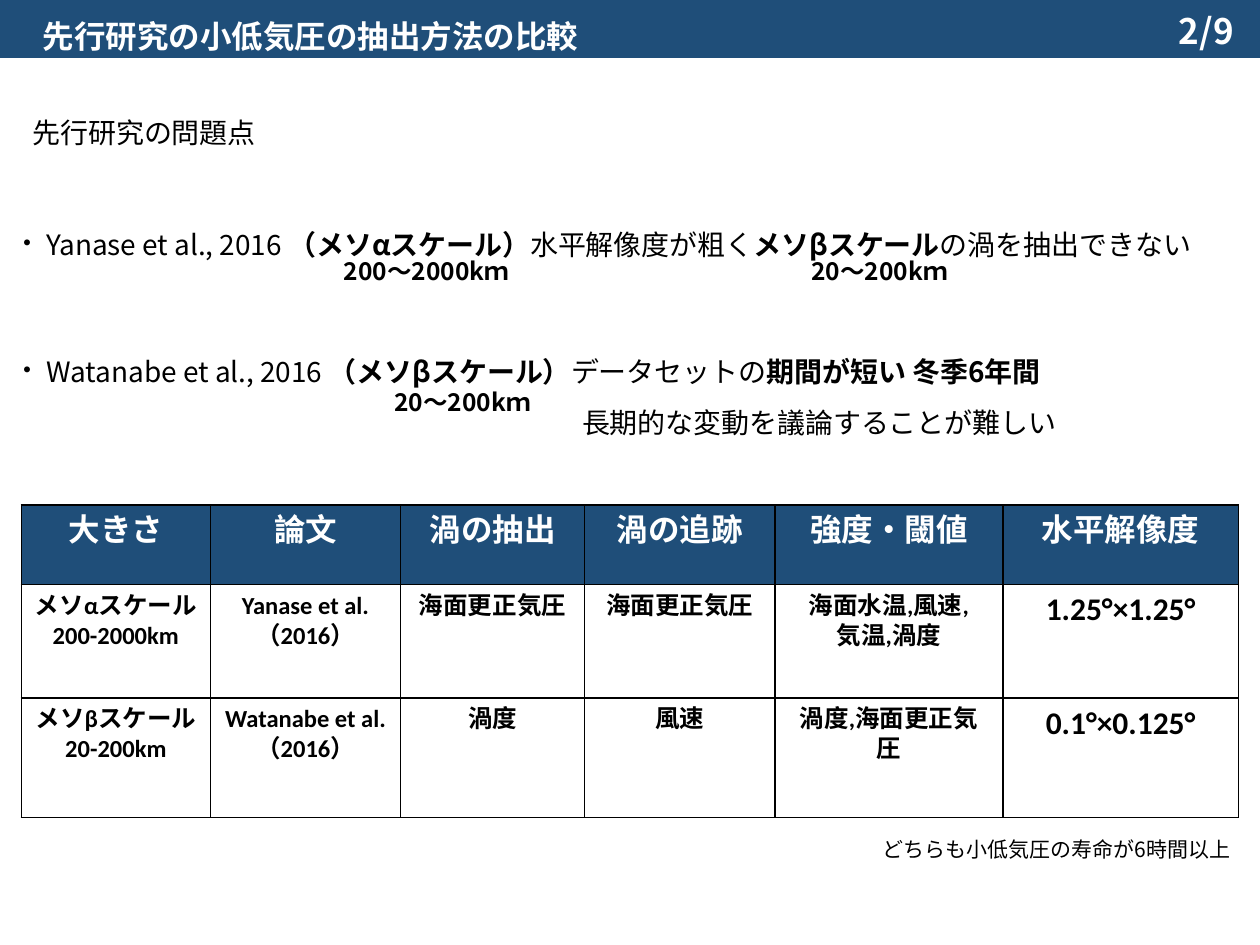
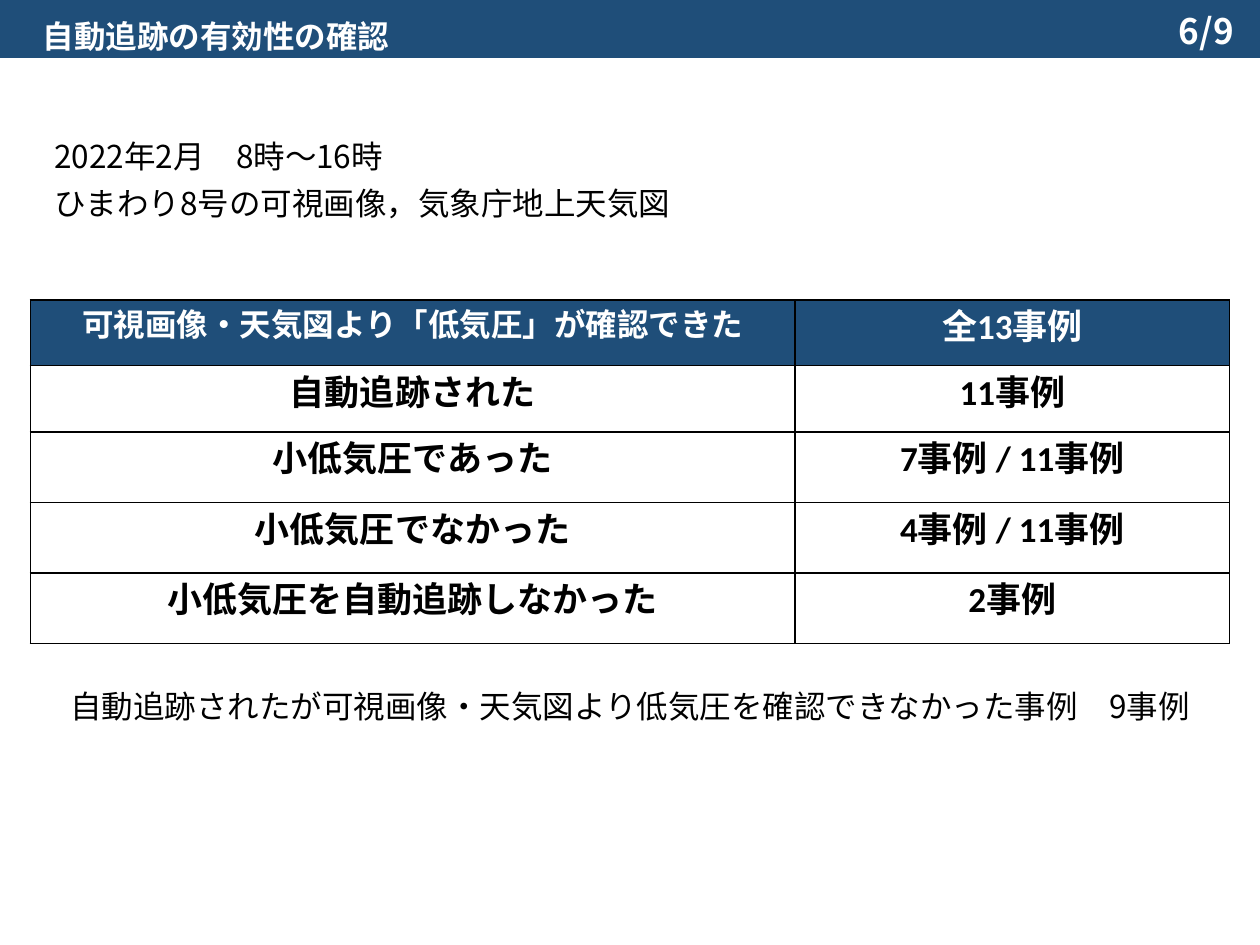
from dataclasses import dataclass

from lxml import etree
from pptx import Presentation, util as u
from pptx.dml.color import RGBColor
from pptx.enum import shapes, text
from pptx.oxml import ns


@dataclass(frozen=True)
class Theme:
    navy: str = "1F4E79"
    white: str = "FFFFFF"
    black: str = "000000"
    font: str = "Noto Sans CJK JP"
    table_font: str = "Calibri"
    note: int = 12
    label: int = 14
    text: int = 16
    title: int = 18
    large: int = 20


@dataclass(frozen=True)
class Box:
    left: float
    top: float
    width: float
    height: float

    def inches(self):
        return [u.Inches(n) for n in (self.left, self.top, self.width, self.height)]

    def inner(self, left, top, width, height):
        return Box(self.left + left, self.top + top, width, height)


THEME = Theme()
PAGE = Box(0, 0, 10, 7.5)
TOP, MIDDLE = text.MSO_ANCHOR.TOP, text.MSO_ANCHOR.MIDDLE
LEFT, CENTER, RIGHT = text.PP_ALIGN.LEFT, text.PP_ALIGN.CENTER, text.PP_ALIGN.RIGHT


def style_run(run, size, color, bold, font=THEME.font):
    run.font.size = u.Pt(size)
    run.font.bold = bold
    run.font.name = font
    run.font.color.rgb = RGBColor.from_string(color)
    east_asian = etree.SubElement(run.font._element, ns.qn("a:ea"))
    east_asian.set("typeface", font)


def write_paragraph(paragraph, parts, size, color=THEME.black, bold=False,
                    align=LEFT, spacing=0.9, before=0):
    paragraph.alignment = align
    paragraph.line_spacing = spacing
    paragraph.space_before = u.Pt(before)
    if isinstance(parts, str):
        parts = [(parts, bold)]
    for words, is_bold in parts:
        run = paragraph.add_run()
        run.text = words
        style_run(run, size, color, is_bold)


def set_bullet(paragraph, char=None, margin=0, indent=0):
    properties = paragraph._p.get_or_add_pPr()
    properties.set("marL", str(u.Inches(margin)))
    properties.set("indent", str(u.Inches(indent)))
    if char:
        etree.SubElement(properties, ns.qn("a:buChar")).set("char", char)
    else:
        etree.SubElement(properties, ns.qn("a:buNone"))


def prepare_frame(shape, anchor):
    frame = shape.text_frame
    frame.auto_size = text.MSO_AUTO_SIZE.NONE
    frame.word_wrap = True
    frame.vertical_anchor = anchor
    return frame


def place(shape, box):
    shape.left, shape.top, shape.width, shape.height = box.inches()


def add_label(slide, box, words, size, anchor=MIDDLE, **style):
    shape = slide.shapes.add_textbox(*box.inches())
    frame = prepare_frame(shape, anchor)
    write_paragraph(frame.paragraphs[0], words, size, **style)
    return frame


def add_header(slide, box, title, page):
    band = slide.shapes.add_shape(shapes.MSO_SHAPE.RECTANGLE, *box.inches())
    band.shadow.inherit = False
    band.fill.solid()
    band.fill.fore_color.rgb = RGBColor.from_string(THEME.navy)
    band.line.fill.background()
    slide.shapes._spTree.insert(2, band._element)

    place(slide.shapes.title, box.inner(0.24, 0.03, 9.08, 0.65))
    frame = prepare_frame(slide.shapes.title, MIDDLE)
    write_paragraph(frame.paragraphs[0], title, THEME.title, THEME.white, True)
    add_label(slide, box.inner(7.64, 0.11, 2.25, 0.4), page, THEME.large,
              color=THEME.white, bold=True, align=RIGHT)


def add_content_slide(presentation, title, page):
    slide = presentation.slides.add_slide(presentation.slide_layouts[1])
    add_header(slide, PAGE.inner(0, -0.05, 10, 0.51), title, page)
    return slide


def set_borders(cell):
    properties = cell._tc.get_or_add_tcPr()
    for position, side in enumerate(("lnL", "lnR", "lnT", "lnB")):
        line = etree.Element(ns.qn(f"a:{side}"), w=str(u.Pt(1)))
        fill = etree.SubElement(line, ns.qn("a:solidFill"))
        etree.SubElement(fill, ns.qn("a:srgbClr"), val=THEME.black)
        properties.insert(position, line)


def fill_cell(cell, words, size, is_header):
    cell.text_frame.text = words
    cell.vertical_anchor = TOP
    if is_header:
        cell.fill.solid()
        cell.fill.fore_color.rgb = RGBColor.from_string(THEME.navy)
    else:
        cell.fill.background()
    set_borders(cell)
    color = THEME.white if is_header else THEME.black
    for paragraph in cell.text_frame.paragraphs:
        paragraph.alignment = CENTER
        for run in paragraph.runs:
            style_run(run, size, color, True, THEME.table_font)


def add_grid(slide, box, rows, widths, heights, size_at):
    frame = slide.shapes.add_table(len(rows), len(widths), *box.inches())
    table = frame.table
    table.first_row = table.horz_banding = False
    for column, width in zip(table.columns, widths):
        column.width = u.Inches(width)
    for row, height in zip(table.rows, heights):
        row.height = u.Inches(height)
    for i, row in enumerate(rows):
        for j, words in enumerate(row):
            fill_cell(table.cell(i, j), words, size_at(i, j), i == 0)


def add_problems(slide, box):
    body = slide.placeholders[1]
    place(body, box)
    frame = prepare_frame(body, TOP)
    frame.margin_top = frame.margin_right = 0
    items = [
        ("・", 0.26, 0, [("Yanase et al., 2016 ", False), ("（メソαスケール）", True),
                        ("水平解像度が粗く", False), ("メソβスケール", True),
                        ("の渦を抽出できない", False)]),
        ("・", 0.26, 43.5, [("Watanabe et al., 2016 ", False), ("（メソβスケール）", True),
                           ("データセットの", False), ("期間が短い 冬季6年間", True)]),
        (None, 4.51, 0, "長期的な変動を議論することが難しい"),
    ]
    for i, (bullet, margin, before, parts) in enumerate(items):
        paragraph = frame.add_paragraph() if i else frame.paragraphs[0]
        set_bullet(paragraph, bullet, margin, -margin if bullet else 0)
        write_paragraph(paragraph, parts, THEME.text, spacing=u.Pt(29), before=before)

    scales = [(2.62, 0.24, "200～2000kｍ"), (6.33, 0.24, "20～200kｍ"),
              (3.02, 1.28, "20～200kｍ")]
    for left, top, words in scales:
        add_label(slide, box.inner(left, top, 2.08, 0.5), words, THEME.label, bold=True)


def add_conditions(slide, box):
    body = slide.placeholders[1]
    place(body, box)
    frame = prepare_frame(body, TOP)
    for i, words in enumerate(["2022年2月　8時～16時",
                               "ひまわり8号の可視画像，気象庁地上天気図"]):
        paragraph = frame.add_paragraph() if i else frame.paragraphs[0]
        set_bullet(paragraph)
        write_paragraph(paragraph, words, THEME.title, before=7.5 * i)


def build_comparison(presentation):
    slide = add_content_slide(presentation, "先行研究の小低気圧の抽出方法の比較", "2/9")
    add_label(slide, PAGE.inner(0.16, 0.78, 2.03, 0.57), "先行研究の問題点", THEME.text)
    add_problems(slide, PAGE.inner(0.01, 1.67, 9.9, 2))
    rows = [
        ["大きさ", "論文", "渦の抽出", "渦の追跡", "強度・閾値", "水平解像度"],
        ["メソαスケール\n200-2000km", "Yanase et al. （2016）", "海面更正気圧",
         "海面更正気圧", "海面水温,風速,\n気温,渦度", "1.25°×1.25°"],
        ["メソβスケール\n20-200km", "Watanabe et al. （2016）", "渦度",
         "風速", "渦度,海面更正気圧", "0.1°×0.125°"],
    ]
    add_grid(slide, PAGE.inner(0.17, 4.01, 9.66, 2.48), rows,
             [1.5, 1.51, 1.46, 1.51, 1.81, 1.87], [0.63, 0.9, 0.95],
             lambda i, j: THEME.title if i == 0 or j == 5 else THEME.label)
    note = add_label(slide, PAGE.inner(6.91, 6.6, 3.04, 0.3),
                     "どちらも小低気圧の寿命が6時間以上", THEME.note)
    note.margin_right = 0


def build_validation(presentation):
    slide = add_content_slide(presentation, "自動追跡の有効性の確認", "6/9")
    add_conditions(slide, PAGE.inner(0.33, 1.07, 5.8, 0.94))
    rows = [
        ["可視画像・天気図より「低気圧」が確認できた", "全13事例"],
        ["自動追跡された", "11事例"],
        ["小低気圧であった", "7事例 / 11事例"],
        ["小低気圧でなかった", "4事例 / 11事例"],
        ["小低気圧を自動追跡しなかった", "2事例"],
    ]
    add_grid(slide, PAGE.inner(0.24, 2.38, 9.52, 2.73), rows,
             [6.07, 3.45], [0.52, 0.53] + [0.56] * 3,
             lambda i, j: THEME.title if i == j == 0 else THEME.large)
    add_label(slide, PAGE.inner(0.46, 5.44, 9.4, 0.43),
              "自動追跡されたが可視画像・天気図より低気圧を確認できなかった事例　9事例",
              THEME.title, anchor=TOP)


def main():
    presentation = Presentation()
    presentation.slide_width = u.Inches(PAGE.width)
    presentation.slide_height = u.Inches(PAGE.height)
    build_comparison(presentation)
    build_validation(presentation)
    presentation.save("out.pptx")


if __name__ == "__main__":
    main()
